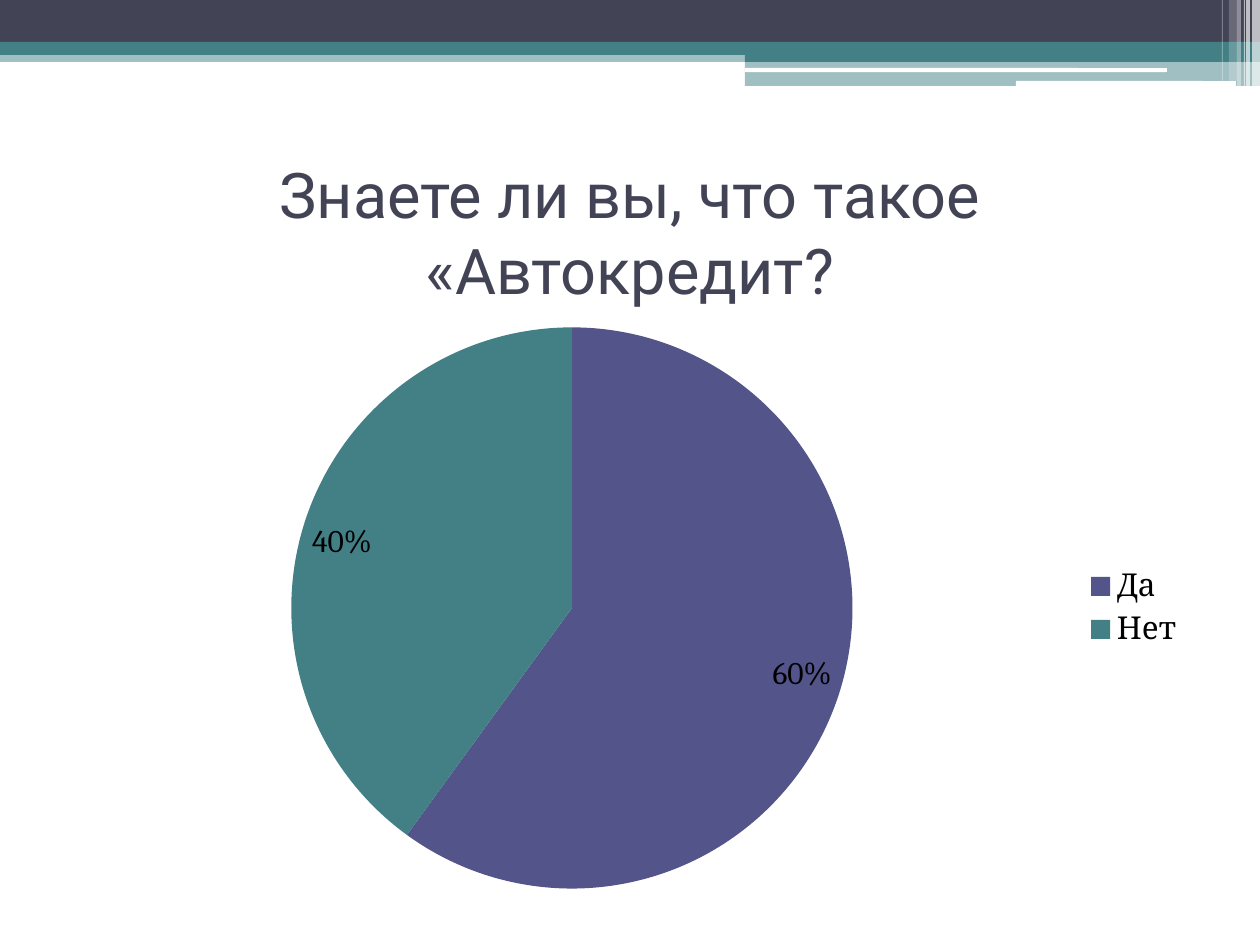
from lxml import etree
from pptx import Presentation
from pptx import util as u
from pptx.chart import data as chart_data
from pptx.dml.color import RGBColor
from pptx.enum import chart as charts, shapes, text
from pptx.oxml import ns

EMU_PER_PX = 914400 / 126
DARK, TEAL, PURPLE, WHITE, BLACK = "424456", "438086", "53548A", "FFFFFF", "000000"


def px(n):
    return u.Emu(round(n * EMU_PER_PX))


def color(hex_value):
    return RGBColor.from_string(hex_value)


class Deck:
    heading = {"name": "Roboto", "size": u.Pt(36)}
    chart_text = {"name": "Cambria", "size": u.Pt(18)}

    def __init__(self, width, height):
        self.prs = Presentation()
        self.prs.slide_width, self.prs.slide_height = px(width), px(height)
        self.s = self.prs.slides.add_slide(self.prs.slide_layouts[6])

    def style(self, font, values, hex_value):
        for name, value in values.items():
            setattr(font, name, value)
        font.color.rgb = color(hex_value)

    def bar(self, box, fill, alpha=100, rounded=False):
        kind = shapes.MSO_SHAPE.ROUNDED_RECTANGLE if rounded else shapes.MSO_SHAPE.RECTANGLE
        sp = self.s.shapes.add_shape(kind, *map(px, box))
        sp.shadow.inherit = False
        sp.line.fill.background()
        sp.fill.solid()
        sp.fill.fore_color.rgb = color(fill)
        if alpha < 100:
            clr = sp.fill._xPr.find(".//" + ns.qn("a:srgbClr"))
            etree.SubElement(clr, ns.qn("a:alpha"), val=str(alpha * 1000))

    def title(self, box, words):
        tf = self.s.shapes.add_textbox(*map(px, box)).text_frame
        tf.word_wrap = True
        tf.vertical_anchor = text.MSO_ANCHOR.MIDDLE
        p = tf.paragraphs[0]
        p.alignment = text.PP_ALIGN.CENTER
        r = p.add_run()
        r.text = words
        self.style(r.font, self.heading, DARK)

    def pie(self, box, values, fills):
        data = chart_data.CategoryChartData()
        data.categories = list(values)
        data.add_series("Series 1", list(values.values()))
        chart = self.s.shapes.add_chart(
            charts.XL_CHART_TYPE.PIE, *map(px, box), data).chart
        self.style(chart.font, self.chart_text, BLACK)
        chart.has_title = False
        chart.has_legend = True
        chart.legend.position = charts.XL_LEGEND_POSITION.RIGHT
        chart.legend.include_in_layout = False

        plot = chart.plots[0]
        plot.vary_by_categories = True
        plot.has_data_labels = True
        labels = {"show_percentage": True, "show_value": False,
                  "number_format": "0%", "number_format_is_linked": False,
                  "position": charts.XL_LABEL_POSITION.INSIDE_END}
        for name, value in labels.items():
            setattr(plot.data_labels, name, value)
        self.style(plot.data_labels.font, self.chart_text, BLACK)
        for i, hex_value in enumerate(fills):
            fill = plot.series[0].points[i].format.fill
            fill.solid()
            fill.fore_color.rgb = color(hex_value)


def main():
    deck = Deck(1260, 945)

    # Header bands
    deck.bar((0, 50, 1260, 12), TEAL, 50)
    deck.bar((0, 0, 1260, 43), DARK)
    deck.bar((0, 42, 1260, 13), TEAL)
    deck.bar((745, 49, 515, 13), TEAL)
    deck.bar((745, 61, 515, 25), TEAL, 50)

    # White rules over the bands
    deck.bar((745, 68, 422, 4), WHITE, rounded=True)
    deck.bar((1016, 81, 220, 5), WHITE, rounded=True)

    # Translucent stripes at the right edge: left, width, height, opacity
    for left, width, height, alpha in (
            (1252, 8, 86, 65), (1246, 4, 86, 65), (1244, 1, 86, 60),
            (1237, 4, 86, 40), (1229, 8, 81, 20), (1222, 1, 81, 30)):
        deck.bar((left, 0, width, height), WHITE, alpha)

    # Question and answers
    deck.title((63, 158, 1134, 147), "Знаете ли вы, что такое «Автокредит?")
    deck.pie((63, 310, 1134, 596), {"Да": 60, "Нет": 40}, (PURPLE, TEAL))

    deck.prs.save("out.pptx")


if __name__ == "__main__":
    main()
